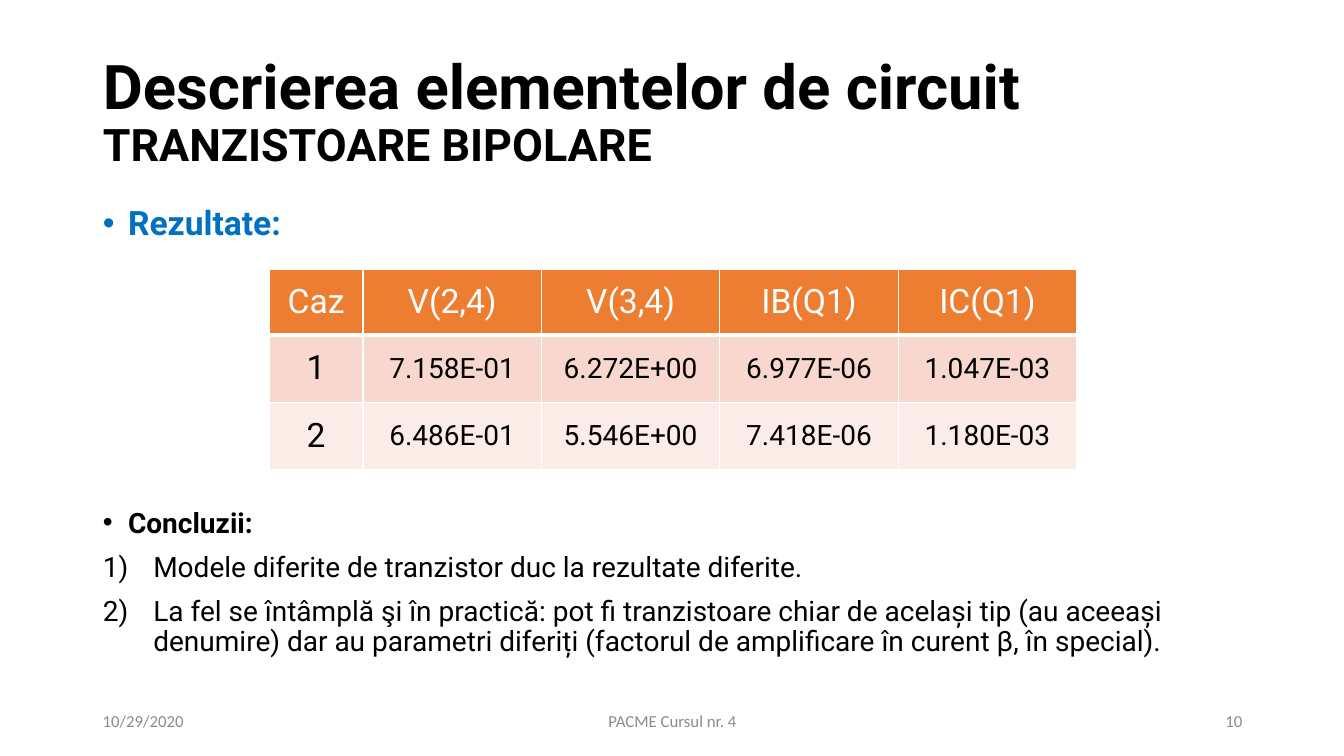
from lxml import etree
from pptx import Presentation
from pptx.dml.color import RGBColor
from pptx.enum.text import MSO_ANCHOR, MSO_AUTO_SIZE, PP_ALIGN
from pptx.oxml.ns import qn
from pptx.util import Inches, Pt

LEFT, CENTER, RIGHT = PP_ALIGN.LEFT, PP_ALIGN.CENTER, PP_ALIGN.RIGHT
MIDDLE, TOP = MSO_ANCHOR.MIDDLE, MSO_ANCHOR.TOP
NO_FIT = MSO_AUTO_SIZE.NONE

BLACK = RGBColor(0x00, 0x00, 0x00)
WHITE = RGBColor(0xFF, 0xFF, 0xFF)
BLUE = RGBColor(0x00, 0x70, 0xC0)
GRAY = RGBColor(0x8C, 0x8C, 0x8C)
ORANGE = RGBColor(0xED, 0x7D, 0x31)
ROSE = RGBColor(0xF8, 0xD7, 0xCE)
PALE = RGBColor(0xFC, 0xEC, 0xE8)


def add_run(para, text, size, color, bold=False, font="Roboto"):
    run = para.add_run()
    run.text = text
    run.font.size = Pt(size)
    run.font.name = font
    run.font.bold = bold
    run.font.color.rgb = color


def place(shape, left, top, width, height, anchor):
    shape.left, shape.top = Inches(left), Inches(top)
    shape.width, shape.height = Inches(width), Inches(height)
    frame = shape.text_frame
    frame.word_wrap = True
    frame.auto_size = NO_FIT
    frame.vertical_anchor = anchor
    return frame


prs = Presentation()
prs.slide_width, prs.slide_height = Inches(13.33), Inches(7.5)
slide = prs.slides.add_slide(prs.slide_layouts[1])

# Title
frame = place(slide.shapes.title, 0.92, 0.4, 11.5, 1.45, MIDDLE)
para = frame.paragraphs[0]
para.alignment = LEFT
para.line_spacing = 0.9
add_run(para, "Descrierea elementelor de circuit", 44, BLACK, True)
para.add_line_break()
add_run(para, "TRANZISTOARE BIPOLARE", 32, BLACK, True)

# Results and conclusions: text, size, color, bold, space before, numbered
items = [
    ("Rezultate:", 24, BLUE, True, 10, False),
    ("Concluzii:", 20, BLACK, True, 190, False),
    ("Modele diferite de tranzistor duc la rezultate diferite.",
     20, BLACK, False, 10, True),
    ("La fel se întâmplă şi în practică: pot fi tranzistoare chiar de "
     "același tip (au aceeași denumire) dar au parametri diferiți "
     "(factorul de amplificare în curent β, în special).",
     20, BLACK, False, 10, True),
]
frame = place(slide.placeholders[1], 0.92, 2, 11.5, 4.76, TOP)
for i, (text, size, color, bold, gap, listed) in enumerate(items):
    para = frame.add_paragraph() if i else frame.paragraphs[0]
    para.line_spacing = 0.9
    para.space_before = Pt(gap)
    add_run(para, text, size, color, bold)
    props = para._p.get_or_add_pPr()
    indent = Inches(0.5 if listed else 0.25)
    props.set("marL", str(indent))
    props.set("indent", str(-indent))
    if listed:
        etree.SubElement(props, qn("a:buAutoNum"), type="arabicParenR")
    else:
        etree.SubElement(props, qn("a:buFont"), typeface="Arial")
        etree.SubElement(props, qn("a:buChar"), char="•")

# Table of results
rows = [
    ("Caz", "V(2,4)", "V(3,4)", "IB(Q1)", "IC(Q1)"),
    ("1", "7.158E-01", "6.272E+00", "6.977E-06", "1.047E-03"),
    ("2", "6.486E-01", "5.546E+00", "7.418E-06", "1.180E-03"),
]
fills = [ORANGE, ROSE, PALE]
table = slide.shapes.add_table(3, 5, Inches(2.67), Inches(2.67),
                               Inches(8), Inches(1.98)).table
for c, column in enumerate(table.columns):
    column.width = Inches(1.77 if c else 0.93)
for r, row in enumerate(rows):
    table.rows[r].height = Inches(0.67 if r else 0.65)
    for c, text in enumerate(row):
        cell = table.cell(r, c)
        cell.vertical_anchor = MIDDLE
        cell.fill.solid()
        cell.fill.fore_color.rgb = fills[r]
        para = cell.text_frame.paragraphs[0]
        para.alignment = CENTER
        add_run(para, text, 20 if r and c else 24, BLACK if r else WHITE)
        # White borders, thicker under the header
        props = cell._tc.get_or_add_tcPr()
        for n, side in enumerate("LRTB"):
            width = 3 if r == 0 and side == "B" else 1
            line = etree.Element(qn("a:ln" + side), w=str(Pt(width)))
            fill = etree.SubElement(line, qn("a:solidFill"))
            etree.SubElement(fill, qn("a:srgbClr"), val=str(WHITE))
            props.insert(n, line)

# Footer
for text, left, width, align in [
    ("10/29/2020", 0.92, 3, LEFT),
    ("PACME Cursul nr. 4", 4.42, 4.5, CENTER),
    ("10", 9.42, 3, RIGHT),
]:
    box = slide.shapes.add_textbox(0, 0, 0, 0)
    para = place(box, left, 6.95, width, 0.4, MIDDLE).paragraphs[0]
    para.alignment = align
    add_run(para, text, 12, GRAY, font="Calibri")

prs.save("out.pptx")
